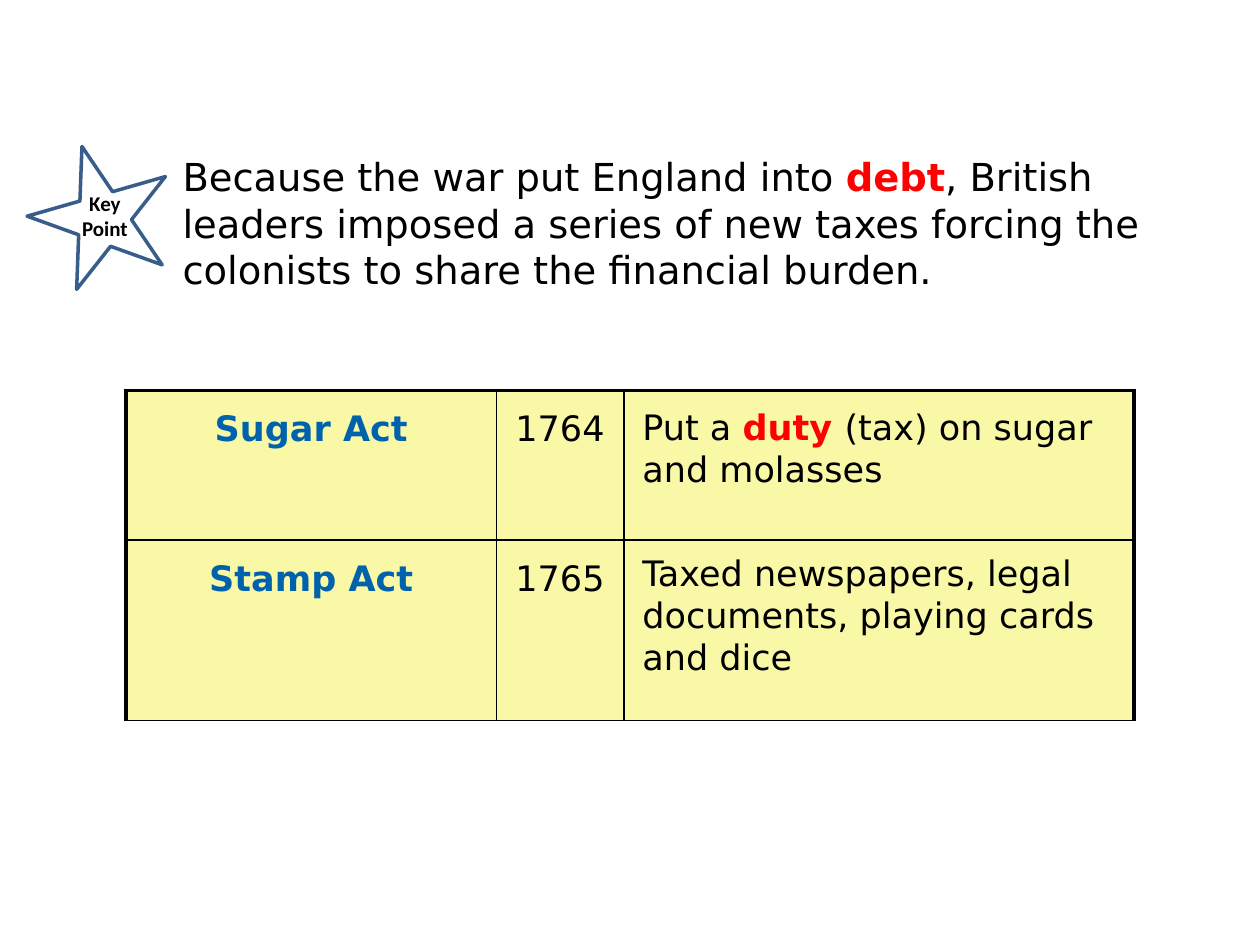
from dataclasses import dataclass

from lxml.etree import SubElement
from pptx import Presentation
from pptx.dml.color import RGBColor
from pptx.enum.shapes import MSO_SHAPE
from pptx.enum.text import PP_ALIGN
from pptx.oxml.ns import qn
from pptx.util import Cm, Pt


@dataclass(frozen=True)
class Theme:
    text: str = "000000"
    accent: str = "FF0000"
    act: str = "0062AC"
    cell: str = "F8F8A6"
    star: str = "385D8A"
    body_font: str = "DejaVu Sans"
    label_font: str = "Calibri"
    lead_size: int = 22
    table_size: int = 20
    label_size: int = 12
    star_line: float = 2
    outer_line: float = 2.25
    inner_line: float = 1


THEME = Theme()


def add_run(p, text, size, font=THEME.body_font, color=THEME.text, bold=False):
    r = p.add_run()
    r.text = text
    r.font.size = Pt(size)
    r.font.name = font
    r.font.bold = bold
    r.font.color.rgb = RGBColor.from_string(color)


def add_text(s, box, size, runs, font=THEME.body_font, align=PP_ALIGN.LEFT):
    """Add a wrapped text box; each run is (text, color, bold)."""
    tf = s.shapes.add_textbox(*map(Cm, box)).text_frame
    tf.word_wrap = True
    p = tf.paragraphs[0]
    p.alignment = align
    for text, color, bold in runs:
        add_run(p, text, size, font, color, bold)


def set_borders(cell, widths):
    """Draw left, right, top and bottom borders in points."""
    tc_pr = cell._tc.get_or_add_tcPr()
    for side, width in zip("LRTB", widths):
        ln = SubElement(tc_pr, qn(f"a:ln{side}"), w=str(Pt(width)))
        fill = SubElement(ln, qn("a:solidFill"))
        SubElement(fill, qn("a:srgbClr"), val=THEME.text)


def add_key_point(s, left, top):
    # Tilted star with its label
    sp = s.shapes.add_shape(MSO_SHAPE.STAR_5_POINT, Cm(left), Cm(top), Cm(2.9), Cm(2.74))
    sp.rotation = 344
    sp.shadow.inherit = False
    sp.fill.background()
    sp.line.color.rgb = RGBColor.from_string(THEME.star)
    sp.line.width = Pt(THEME.star_line)
    add_text(s, (left + 0.48, top + 0.81, 2.11, 1.3), THEME.label_size,
             [("Key Point", THEME.text, True)], THEME.label_font, PP_ALIGN.CENTER)


def add_lead(s, box):
    # Main statement
    add_text(s, box, THEME.lead_size, [
        ("Because the war put England into ", THEME.text, False),
        ("debt", THEME.accent, True),
        (", British leaders imposed a series of new taxes forcing the "
         "colonists to share the financial burden.", THEME.text, False),
    ])


def add_acts_table(s, left, top):
    columns = (7.47, 2.57, 10.28)
    rows = (3.02, 3.63)
    acts = (("Sugar Act", "1764"), ("Stamp Act", "1765"))
    descriptions = (
        [("Put a ", THEME.text, False), ("duty ", THEME.accent, True),
         ("(tax) on sugar and molasses", THEME.text, False)],
        [("Taxed newspapers, legal documents, playing cards and dice", THEME.text, False)],
    )

    # Grid
    frame = s.shapes.add_table(len(rows), len(columns), Cm(left), Cm(top),
                               Cm(sum(columns)), Cm(sum(rows)))
    table = frame.table
    table.first_row = table.horz_banding = False
    for column, width in zip(table.columns, columns):
        column.width = Cm(width)
    for row, height in zip(table.rows, rows):
        row.height = Cm(height)

    # Cells: thick lines at the left, right and top edges
    inner, outer = THEME.inner_line, THEME.outer_line
    for i in range(len(rows)):
        for j in range(len(columns)):
            cell = table.cell(i, j)
            set_borders(cell, (outer if j == 0 else inner,
                               outer if j == len(columns) - 1 else inner,
                               outer if i == 0 else inner, inner))
            cell.fill.solid()
            cell.fill.fore_color.rgb = RGBColor.from_string(THEME.cell)
            cell.margin_left = cell.margin_right = Cm(0.38)
            cell.margin_top = cell.margin_bottom = Cm(0.38)

    # Act names and years
    for i, (act, year) in enumerate(acts):
        p = table.cell(i, 0).text_frame.paragraphs[0]
        p.alignment = PP_ALIGN.CENTER
        add_run(p, act, THEME.table_size, color=THEME.act, bold=True)
        add_run(table.cell(i, 1).text_frame.paragraphs[0], year, THEME.table_size)

    # Descriptions over the last column
    text_left = left + sum(columns[:2]) + 0.12
    for runs, offset, height in zip(descriptions, (0.18, 3.13), (2.74, 3.58)):
        add_text(s, (text_left, top + offset, 10.16, height), THEME.table_size, runs)


def main():
    prs = Presentation()
    prs.slide_width, prs.slide_height = Cm(25.4), Cm(19.05)
    s = prs.slides.add_slide(prs.slide_layouts[6])
    add_lead(s, (3.43, 2.97, 20.32, 3.07))
    add_key_point(s, 0.58, 2.9)
    add_acts_table(s, 2.54, 7.87)
    prs.save("out.pptx")


if __name__ == "__main__":
    main()
